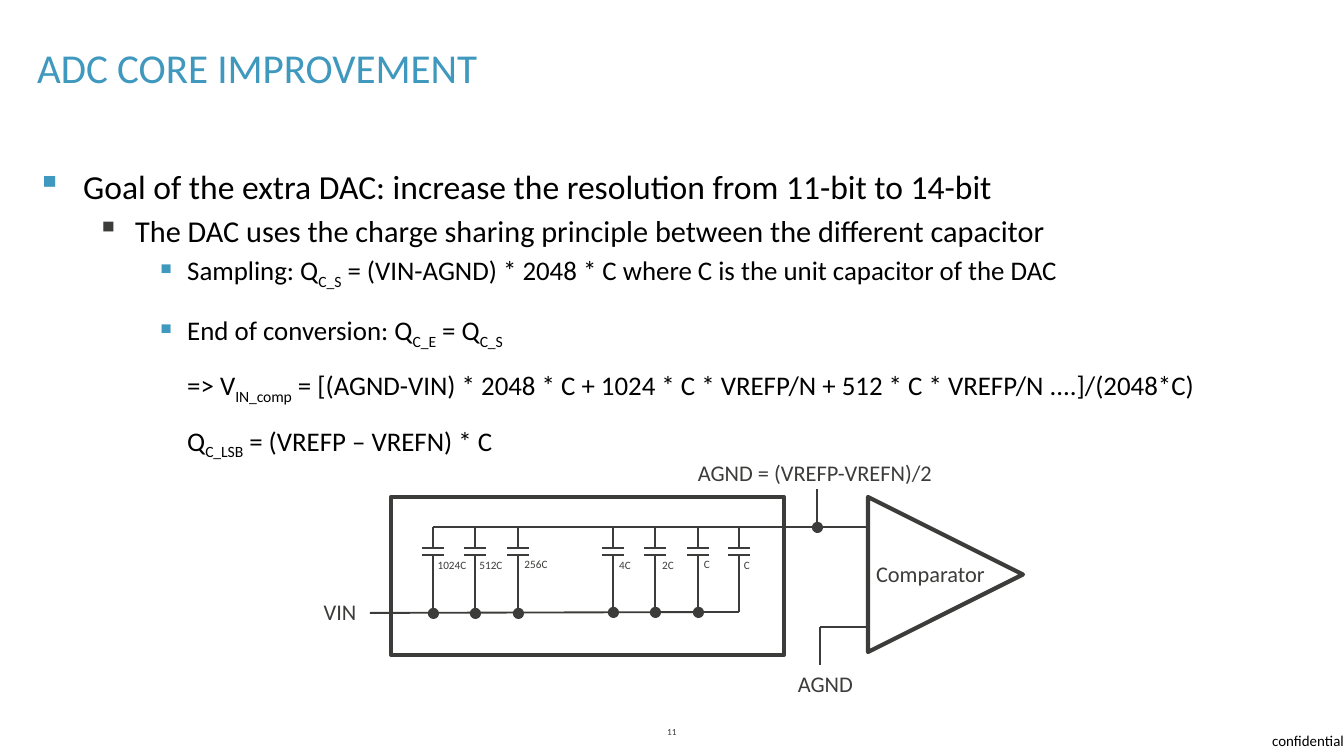
from typing import NamedTuple

from lxml.etree import SubElement
from pptx import Presentation
from pptx.dml.color import RGBColor
from pptx.enum.shapes import MSO_CONNECTOR, MSO_SHAPE
from pptx.enum.text import MSO_ANCHOR as Anchor, PP_ALIGN as Align
from pptx.oxml.ns import qn
from pptx.util import Pt

PX = 914400 / 134.4
FONT, BLUE, DARK, BLACK = "Calibri", "3F98BD", "3C3C3B", "000000"


class Bullet(NamedTuple):
    text: str  # parts between bars alternate normal and subscript
    size: float
    left: int
    hang: int
    color: str
    before: float
    spacing: float = 1.0


class Capacitor(NamedTuple):
    x: int
    label: str
    label_x: int
    label_y: int
    bottom: int
    dot: bool = True


class Label(NamedTuple):
    text: str
    x: int
    y: int
    w: int


BULLETS = [
    Bullet("Goal of the extra DAC: increase the resolution from 11-bit to 14-bit",
           18, 46, 46, BLUE, 0),
    Bullet("The DAC uses the charge sharing principle between the different capacitor",
           16.2, 98, 38, DARK, 3.2),
    Bullet("Sampling: Q|C_S| = (VIN-AGND) * 2048 * C where C is the unit capacitor of the DAC",
           14.4, 150, 31, BLUE, 2.9),
    Bullet("End of conversion: Q|C_E| = Q|C_S|\n=> V|IN_comp| = [(AGND-VIN) * 2048 * C"
           " + 1024 * C * VREFP/N + 512 * C * VREFP/N ....]/(2048*C)\n"
           "Q|C_LSB| = (VREFP – VREFN) * C",
           14.4, 150, 31, BLUE, 2.9, 1.5),
]
CAPACITORS = [
    Capacitor(433, "1024C", 452, 552, 613),
    Capacitor(475, "512C", 491, 552, 613),
    Capacitor(518, "256C", 536, 551, 613),
    Capacitor(613, "4C", 625, 552, 612),
    Capacitor(655, "2C", 668, 552, 612),
    Capacitor(698, "C", 707, 551, 612),
    Capacitor(739, "C", 747, 552, 612, dot=False),
]
LABELS = [
    Label("VIN", 308, 592, 64),
    Label("Comparator", 860, 554, 141),
    Label("AGND = (VREFP-VREFN)/2", 672, 453, 286),
    Label("AGND", 779, 664, 93),
]
WIRES = [
    (370, 613, 739, 612),
    (433, 527, 868, 527),
    (817, 489, 817, 527),
    (820, 627, 820, 665),
    (868, 627, 820, 627),
]
BUS_Y, PLATE_TOP, PLATE_BOTTOM, PLATE_HALF = 527, 548, 555, 11

prs = Presentation()
prs.slide_width, prs.slide_height = round(1344 * PX), round(756 * PX)
s = prs.slides.add_slide(prs.slide_layouts[6])


def emu(*lengths: int) -> list[int]:
    return [round(v * PX) for v in lengths]


def rgb(color: str) -> RGBColor:
    return RGBColor.from_string(color)


def add_runs(p, text: str, size: float, color: str) -> None:
    """Write text, with every second bar-separated part as subscript."""
    for i, part in enumerate(text.split("|")):
        for j, line in enumerate(part.split("\n")):
            if j:
                p.add_line_break()
                SubElement(p._p[-1], qn("a:rPr"), sz=str(round(size * 100)))
            if not line:
                continue
            r = p.add_run()
            r.text = line
            r.font.name, r.font.size = FONT, Pt(size)
            r.font.color.rgb = rgb(color)
            if i % 2:
                r._r.get_or_add_rPr().set("baseline", "-25000")


def add_text(text: str, x: int, y: int, w: int, h: int, *, size: float = 12,
             color: str = DARK, align: Align = Align.LEFT,
             anchor: Anchor = Anchor.TOP, wrap: bool = True, inset: bool = True):
    tf = s.shapes.add_textbox(*emu(x, y, w, h)).text_frame
    tf.word_wrap, tf.vertical_anchor = wrap, anchor
    if not inset:
        tf.margin_left = tf.margin_right = tf.margin_top = tf.margin_bottom = 0
    tf.paragraphs[0].alignment = align
    if text:
        add_runs(tf.paragraphs[0], text, size, color)
    return tf


def add_bullet(p, b: Bullet) -> None:
    left, hang = emu(b.left, b.hang)
    pPr = p._p.get_or_add_pPr()
    pPr.set("marL", str(left))
    pPr.set("indent", str(-hang))
    p.line_spacing, p.space_before = b.spacing, Pt(b.before)
    SubElement(SubElement(pPr, qn("a:buClr")), qn("a:srgbClr"), val=b.color)
    SubElement(pPr, qn("a:buChar"), char="▪")
    add_runs(p, b.text, b.size, BLACK)


def add_wire(x1: int, y1: int, x2: int, y2: int) -> None:
    c = s.shapes.add_connector(MSO_CONNECTOR.STRAIGHT, *emu(x1, y1, x2, y2))
    c.line.color.rgb, c.line.width = rgb(DARK), Pt(1)
    SubElement(c._element.spPr, qn("a:effectLst"))


def add_outline(kind: MSO_SHAPE, x: int, y: int, w: int, h: int,
                filled: bool = False, rotation: int = 0) -> None:
    sp = s.shapes.add_shape(kind, *emu(x, y, w, h))
    sp.shadow.inherit = False
    sp.rotation = rotation
    sp.line.color.rgb, sp.line.width = rgb(DARK), Pt(2.25)
    if filled:
        sp.fill.solid()
        sp.fill.fore_color.rgb = rgb(DARK)
    else:
        sp.fill.background()


def add_dot(x: int, y: int) -> None:
    add_outline(MSO_SHAPE.OVAL, x - 3, y - 3, 7, 7, filled=True)


def add_capacitor(c: Capacitor) -> None:
    add_wire(c.x, BUS_Y, c.x, PLATE_TOP)
    for y in (PLATE_TOP, PLATE_BOTTOM):
        add_wire(c.x - PLATE_HALF, y, c.x + PLATE_HALF, y)
    add_wire(c.x, PLATE_BOTTOM, c.x, c.bottom)
    if c.dot:
        add_dot(c.x, c.bottom)
    add_text(c.label, c.label_x - 29, c.label_y, 58, 27, size=6,
             align=Align.CENTER, wrap=False)


add_text("confidential", 1236, 723, 108, 34, size=8, color=BLACK,
         align=Align.RIGHT, anchor=Anchor.MIDDLE, inset=False)
add_text("ADC CORE IMPROVEMENT", 24, 35, 1286, 63, size=22, color=BLUE,
         anchor=Anchor.BOTTOM)
body = add_text("", 24, 159, 1266, 332)
for i, bullet in enumerate(BULLETS):
    add_bullet(body.add_paragraph() if i else body.paragraphs[0], bullet)
add_text("11", 609, 719, 126, 26, size=5, align=Align.CENTER, anchor=Anchor.MIDDLE)

add_outline(MSO_SHAPE.RECTANGLE, 391, 497, 393, 158)
add_outline(MSO_SHAPE.ISOSCELES_TRIANGLE, 868, 497, 155, 155, rotation=90)
for wire in WIRES:
    add_wire(*wire)
for capacitor in CAPACITORS:
    add_capacitor(capacitor)
add_dot(817, BUS_Y)
for label in LABELS:
    add_text(*label, 40, align=Align.CENTER, wrap=False)

prs.save("out.pptx")
